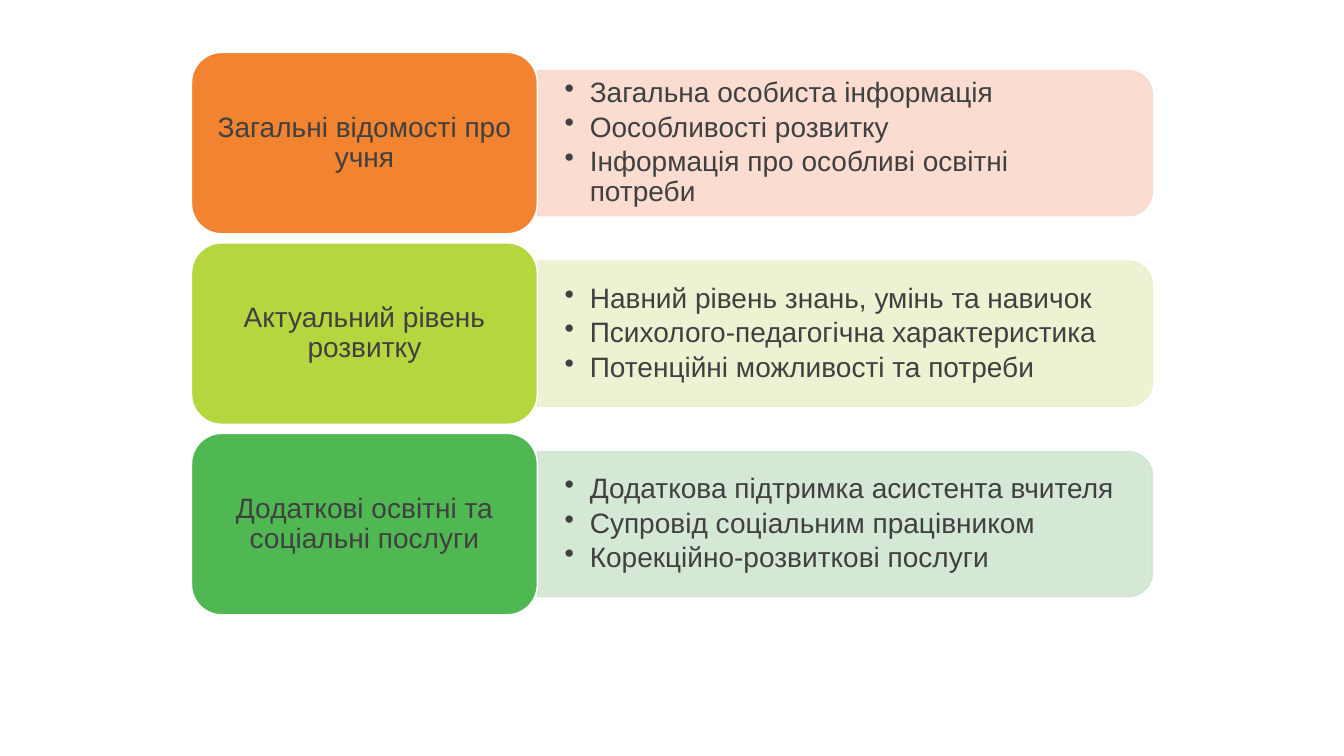
from lxml import etree
from pptx import Presentation
from pptx.dml.color import RGBColor
from pptx.enum.shapes import MSO_SHAPE as Shape
from pptx.enum.text import MSO_ANCHOR as Anchor, PP_ALIGN as Align
from pptx.oxml.ns import qn
from pptx.util import Inches, Pt

TEXT = RGBColor(0x40, 0x40, 0x40)
WHITE = RGBColor(0xFF, 0xFF, 0xFF)
ORANGE = RGBColor(0xF2, 0x83, 0x30)
LIME = RGBColor(0xB5, 0xD6, 0x3F)
GREEN = RGBColor(0x50, 0xB8, 0x52)
PALE_ORANGE = RGBColor(0xFA, 0xD9, 0xCD)
PALE_LIME = RGBColor(0xED, 0xF1, 0xCE)
PALE_GREEN = RGBColor(0xD0, 0xE6, 0xD1)

SECTIONS = [
    ("Загальні відомості про учня", ORANGE, PALE_ORANGE,
     ["Загальна особиста інформація",
      "Оособливості розвитку",
      "Інформація про особливі освітні потреби"]),
    ("Актуальний рівень розвитку", LIME, PALE_LIME,
     ["Навний рівень знань, умінь та навичок",
      "Психолого-педагогічна характеристика",
      "Потенційні можливості та потреби"]),
    ("Додаткові освітні та соціальні послуги", GREEN, PALE_GREEN,
     ["Додаткова підтримка асистента вчителя",
      "Супровід соціальним працівником",
      "Корекційно-розвиткові послуги"]),
]

FIRST_CENTER, ROW_STEP = 1.42, 1.89
LABEL_LEFT, LABEL_WIDTH, LABEL_HEIGHT = 1.9, 3.43, 1.8
PANEL_LEFT = LABEL_LEFT + LABEL_WIDTH
PANEL_WIDTH, PANEL_HEIGHT = 6.1, 1.44
DETAILS_WIDTH, DETAILS_HEIGHT = 6.03, 1.3


def paint(shape, fill, line):
    shape.shadow.inherit = False
    shape.fill.solid()
    shape.fill.fore_color.rgb = fill
    shape.line.color.rgb = line
    shape.line.width = Pt(1)


def set_frame(frame, side, top):
    frame.word_wrap = True
    frame.vertical_anchor = Anchor.MIDDLE
    frame.margin_left = frame.margin_right = Inches(side)
    frame.margin_top = frame.margin_bottom = Inches(top)


def format_paragraph(paragraph):
    paragraph.line_spacing = 0.9
    for run in paragraph.runs:
        run.font.name = "Arial"
        run.font.size = Pt(20)
        run.font.color.rgb = TEXT


def add_bullet(paragraph):
    properties = paragraph._p.get_or_add_pPr()
    properties.set("marL", str(Inches(0.25)))
    properties.set("indent", str(-Inches(0.25)))
    etree.SubElement(properties, qn("a:buChar")).set("char", "•")


def add_panel(slide, center, color):
    """Draw a tall shape turned a quarter so its round corners face right."""
    left = PANEL_LEFT + (PANEL_WIDTH - PANEL_HEIGHT) / 2
    panel = slide.shapes.add_shape(
        Shape.ROUND_2_SAME_RECTANGLE, Inches(left), Inches(center - PANEL_WIDTH / 2),
        Inches(PANEL_HEIGHT), Inches(PANEL_WIDTH))
    panel.rotation = 90
    paint(panel, color, color)
    for tint in panel._element.spPr.iter(qn("a:srgbClr")):
        etree.SubElement(tint, qn("a:alpha")).set("val", "90000")


def add_details(slide, center, items):
    box = slide.shapes.add_textbox(
        Inches(PANEL_LEFT), Inches(center - DETAILS_HEIGHT / 2),
        Inches(DETAILS_WIDTH), Inches(DETAILS_HEIGHT))
    frame = box.text_frame
    set_frame(frame, 0.27, 0.14)
    frame.text = "\n".join(items)
    for paragraph in frame.paragraphs:
        add_bullet(paragraph)
        format_paragraph(paragraph)
        paragraph.space_after = Pt(3)


def add_label(slide, center, title, color):
    label = slide.shapes.add_shape(
        Shape.ROUNDED_RECTANGLE, Inches(LABEL_LEFT), Inches(center - LABEL_HEIGHT / 2),
        Inches(LABEL_WIDTH), Inches(LABEL_HEIGHT))
    paint(label, color, WHITE)
    frame = label.text_frame
    set_frame(frame, 0.08, 0.04)
    frame.text = title
    frame.paragraphs[0].alignment = Align.CENTER
    format_paragraph(frame.paragraphs[0])


def main():
    deck = Presentation()
    deck.slide_width, deck.slide_height = Inches(13.33), Inches(7.5)
    slide = deck.slides.add_slide(deck.slide_layouts[6])
    for row, (title, color, pale_color, items) in enumerate(SECTIONS):
        center = FIRST_CENTER + row * ROW_STEP
        add_panel(slide, center, pale_color)
        add_details(slide, center, items)
        add_label(slide, center, title, color)
    deck.save("out.pptx")


if __name__ == "__main__":
    main()
